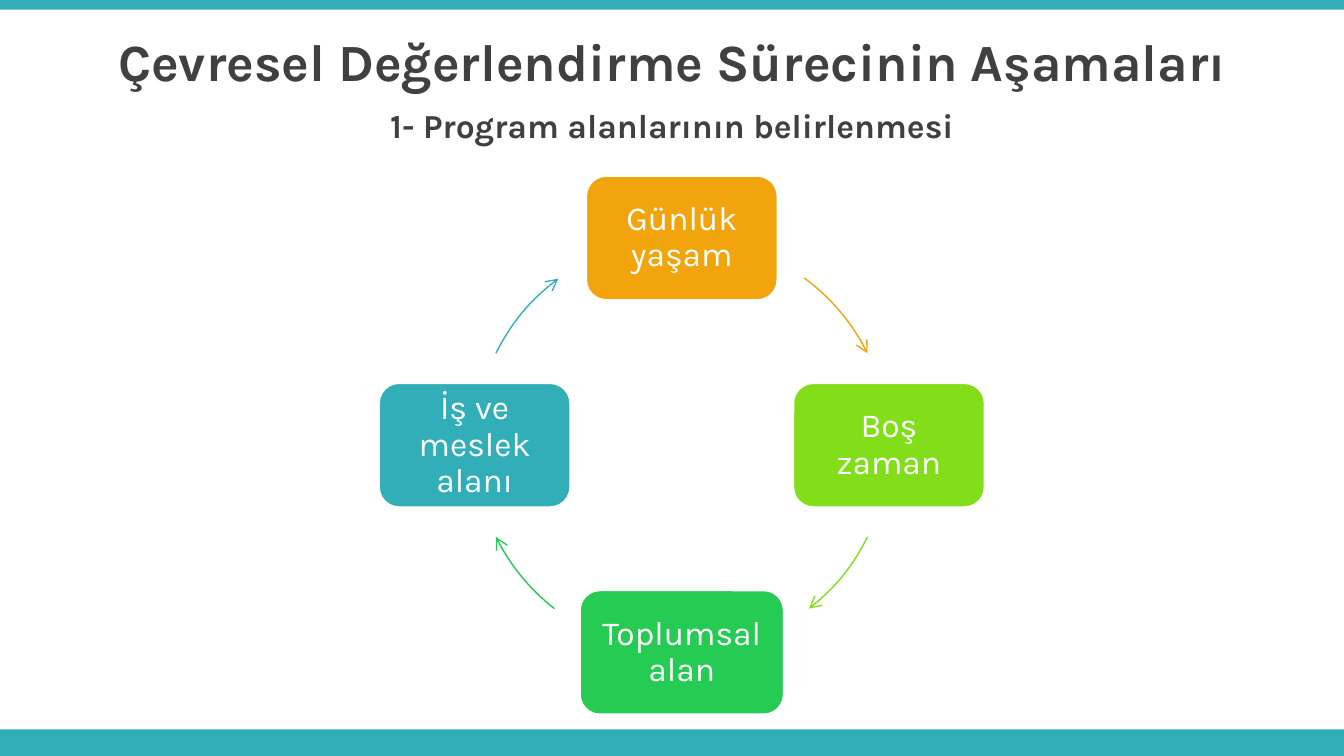
"""Build a slide showing the four programme areas as a cycle."""
from math import cos, radians, sin

from lxml.etree import SubElement
from pptx import Presentation
from pptx.dml.color import RGBColor
from pptx.enum.shapes import MSO_SHAPE as Shape
from pptx.enum.text import MSO_ANCHOR as Anchor, MSO_AUTO_SIZE as AutoSize, PP_ALIGN as Align
from pptx.oxml.ns import qn
from pptx.util import Pt

PX = 9525
COLORS = {
    "teal": "32AEB8",
    "orange": "F2A40D",
    "lime": "83DE1A",
    "green": "26CB53",
    "dark": "404040",
    "white": "FFFFFF",
}


def color(name):
    return RGBColor.from_string(COLORS[name])


def write(shape, text, size, text_color, bold=False):
    frame = shape.text_frame
    frame.text = text
    frame.word_wrap = True
    frame.auto_size = AutoSize.NONE
    frame.vertical_anchor = Anchor.MIDDLE
    paragraph = frame.paragraphs[0]
    paragraph.alignment = Align.CENTER
    paragraph.space_before = Pt(0)
    font = paragraph.runs[0].font
    font.name = "Karla"
    font.size = Pt(size)
    font.bold = bold
    font.color.rgb = color(text_color)
    return paragraph


presentation = Presentation()
presentation.slide_width = 960 * PX
presentation.slide_height = 540 * PX
slide = presentation.slides.add_slide(presentation.slide_layouts[0])
shapes = slide.shapes

for top, height in [(521, 19), (0, 7)]:
    bar = shapes.add_shape(Shape.RECTANGLE, 0, top * PX, 960 * PX, height * PX)
    bar.shadow.inherit = False
    bar.fill.solid()
    bar.fill.fore_color.rgb = color("teal")
    bar.line.fill.background()

headings = [
    ("Çevresel Değerlendirme Sürecinin Aşamaları", 13, 60, 28),
    ("1- Program alanlarının belirlenmesi", 74, 30, 18),
]
for placeholder, (text, top, height, size) in zip(slide.placeholders, headings):
    placeholder.left, placeholder.top = 0, top * PX
    placeholder.width, placeholder.height = 960 * PX, height * PX
    write(placeholder, text, size, "dark", bold=True)

center_x, center_y, radius = 487, 318, 148
node_height = 90
areas = [
    ("Günlük yaşam", "orange", 138, 270, 306.3, 333.7),
    ("Boş zaman", "lime", 138, 0, 26.3, 52.1),
    ("Toplumsal alan", "green", 147, 90, 127.9, 153.7),
    ("İş ve meslek alanı", "teal", 138, 180, 206.3, 233.4),
]
for text, area_color, node_width, angle, arc_start, arc_end in areas:
    left = center_x + radius * cos(radians(angle)) - node_width / 2
    top = center_y + radius * sin(radians(angle)) - node_height / 2
    node = shapes.add_shape(
        Shape.ROUNDED_RECTANGLE, round(left * PX), round(top * PX), node_width * PX, node_height * PX
    )
    node.shadow.inherit = False
    node.fill.solid()
    node.fill.fore_color.rgb = color(area_color)
    node.line.color.rgb = color("white")
    node.line.width = Pt(2)
    frame = node.text_frame
    frame.margin_left = frame.margin_right = 7 * PX
    frame.margin_top = frame.margin_bottom = 0
    write(node, text, 18, "white").line_spacing = 0.9

    arc = shapes.add_shape(
        Shape.ARC, (center_x - radius) * PX, (center_y - radius) * PX, 2 * radius * PX, 2 * radius * PX
    )
    arc.shadow.inherit = False
    arc.adjustments[0] = arc_start * 0.6
    arc.adjustments[1] = arc_end * 0.6
    arc.fill.background()
    arc.line.color.rgb = color(area_color)
    arc.line.width = Pt(0.75)
    SubElement(arc.element.spPr.find(qn("a:ln")), qn("a:tailEnd"), type="arrow")

presentation.save("out.pptx")
